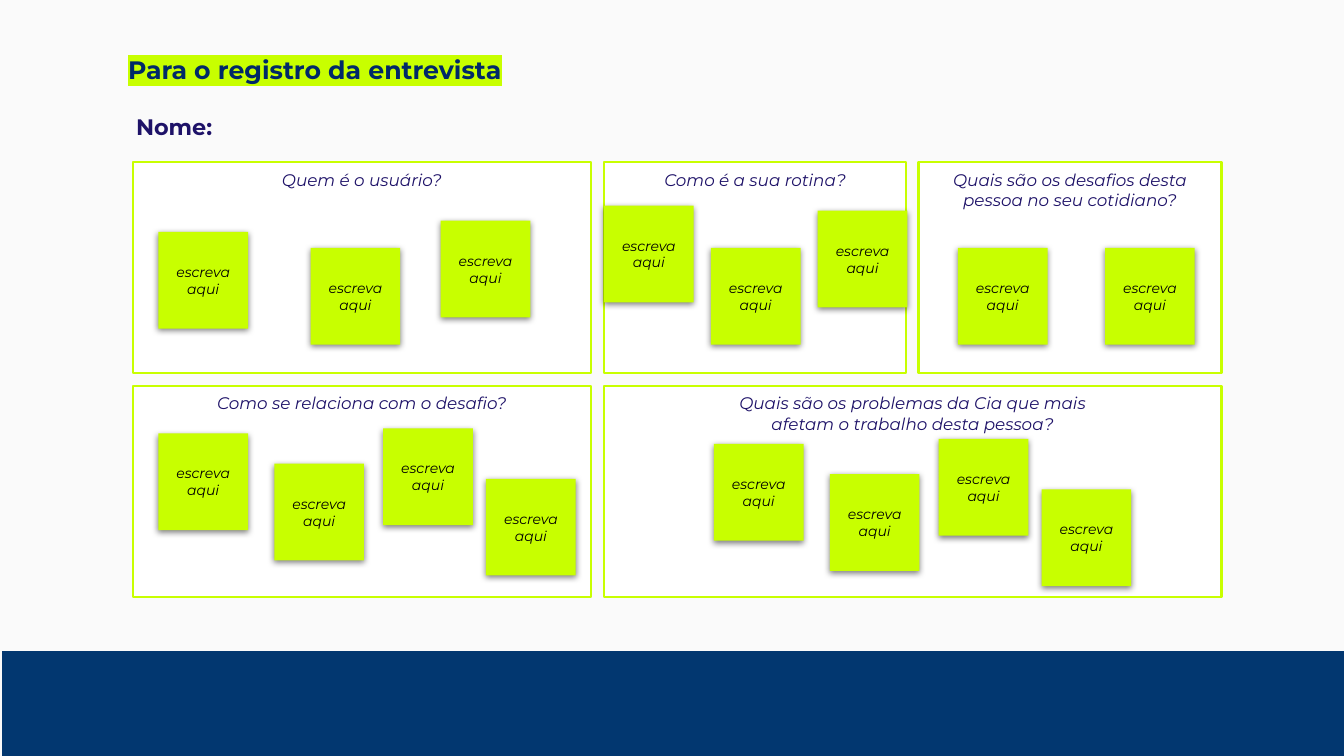
from dataclasses import dataclass

from lxml import etree
from pptx import Presentation
from pptx import util as u
from pptx.dml.color import RGBColor
from pptx.enum import shapes, text
from pptx.oxml import parse_xml
from pptx.oxml.ns import nsdecls, qn

PAPER = RGBColor(0xFA, 0xFA, 0xFA)
WHITE = RGBColor(0xFF, 0xFF, 0xFF)
BLACK = RGBColor(0x00, 0x00, 0x00)
LIME = RGBColor(0xC8, 0xFF, 0x00)
INDIGO = RGBColor(0x1E, 0x12, 0x68)
NAVY = RGBColor(0x00, 0x29, 0x68)
BAND_BLUE = RGBColor(0x02, 0x37, 0x70)

FONT = "Montserrat"
CELL = u.Inches(0.1)
COLUMNS, ROWS = 133.3, 75
PANEL_LEFTS = (13.2, 59.9, 91.1)
PANEL_RIGHTS = (58.6, 89.9, 121.15)
PANEL_TOP, PANEL_HEIGHT, PANEL_PITCH = 16.1, 20.9, 22.2
NOTE_WIDTH, NOTE_HEIGHT = 8.9, 9.6
STAIRCASE = ((0, 0), (11.5, 3), (22.3, -0.5), (32.5, 4.5))


@dataclass(frozen=True)
class Panel:
    question: str
    row: int
    first: int
    last: int
    notes: tuple


def staircase(left: float, top: float) -> tuple:
    return tuple((left + across, top + down) for across, down in STAIRCASE)


PANELS = (
    Panel("Quem é o usuário?", 0, 0, 0, ((2.5, 6.9), (17.6, 8.5), (30.5, 5.8))),
    Panel("Como é a sua rotina?", 0, 1, 1, ((0, 4.3), (10.6, 8.5), (21.2, 4.8))),
    Panel("Quais são os desafios desta pessoa no seu cotidiano?", 0, 2, 2,
          ((3.9, 8.5), (18.5, 8.5))),
    Panel("Como se relaciona com o desafio?", 1, 0, 0, staircase(2.5, 4.7)),
    Panel("Quais são os problemas da Cia que mais\vafetam o trabalho desta pessoa?", 1, 1, 2,
          staircase(10.9, 5.75)),
)


def grid(*cells: float) -> list:
    return [u.Emu(round(count * CELL)) for count in cells]


def write(box, words: str, size: float, color: RGBColor, inset: float = 0.13,
          anchor=text.MSO_ANCHOR.MIDDLE, align=text.PP_ALIGN.CENTER,
          bold: bool = False, italic: bool = False):
    frame = box.text_frame
    frame.word_wrap = True
    frame.vertical_anchor = anchor
    frame.margin_left = frame.margin_right = u.Inches(0.13)
    frame.margin_top = frame.margin_bottom = u.Inches(inset)
    para = frame.paragraphs[0]
    para.text = words
    para.alignment = align
    font = para.font
    font.name, font.size = FONT, u.Pt(size)
    font.bold, font.italic = bold, italic
    font.color.rgb = color
    return para


def add_rectangle(page, cells: tuple, fill: RGBColor):
    box = page.shapes.add_shape(shapes.MSO_SHAPE.RECTANGLE, *grid(*cells))
    box.shadow.inherit = False
    box.fill.solid()
    box.fill.fore_color.rgb = fill
    box.line.fill.background()
    return box


def add_panel(page, panel: Panel) -> tuple:
    left = PANEL_LEFTS[panel.first]
    top = PANEL_TOP + panel.row * PANEL_PITCH
    width = PANEL_RIGHTS[panel.last] - left
    box = add_rectangle(page, (left, top, width, PANEL_HEIGHT), WHITE)
    box.line.color.rgb = LIME
    box.line.width = u.Pt(1.5)
    write(box, panel.question, 12, INDIGO, inset=0.07,
          anchor=text.MSO_ANCHOR.TOP, italic=True)
    return left, top


def add_note(page, left: float, top: float) -> None:
    box = add_rectangle(page, (left, top, NOTE_WIDTH, NOTE_HEIGHT), LIME)
    write(box, "escreva aqui", 10, BLACK, italic=True)
    effects = box._element.spPr.find(qn("a:effectLst"))
    effects.append(parse_xml(
        f'<a:outerShdw {nsdecls("a")} blurRad="{u.Pt(4.5)}" dist="{u.Pt(1.5)}" '
        f'dir="5400000" algn="bl" rotWithShape="0"><a:srgbClr val="{BLACK}">'
        '<a:alpha val="50000"/></a:srgbClr></a:outerShdw>'))


def add_title(page) -> None:
    title = page.shapes.title
    title.left, title.top, title.width, title.height = grid(11.4, 4.2, 107.7, 4.9)
    para = write(title, "Para o registro da entrevista", 18, NAVY,
                 align=text.PP_ALIGN.LEFT, bold=True)
    title.text_frame.auto_size = text.MSO_AUTO_SIZE.NONE
    para.line_spacing = 1.15
    para.space_after = u.Pt(13)
    properties = para.runs[0].font._element
    highlight = etree.SubElement(properties, qn("a:highlight"))
    etree.SubElement(highlight, qn("a:srgbClr"), val=str(LIME))


def add_name_field(page) -> None:
    box = page.shapes.add_textbox(*grid(12.2, 9.9, 43.7, 5.4))
    write(box, "Nome:", 16, INDIGO, anchor=text.MSO_ANCHOR.TOP,
          align=text.PP_ALIGN.LEFT, bold=True)
    box.text_frame.auto_size = text.MSO_AUTO_SIZE.SHAPE_TO_FIT_TEXT


def main() -> None:
    deck = Presentation()
    deck.slide_width, deck.slide_height = grid(COLUMNS, ROWS)
    page = deck.slides.add_slide(deck.slide_layouts.get_by_name("Title Only"))
    page.background.fill.solid()
    page.background.fill.fore_color.rgb = PAPER

    add_title(page)
    add_name_field(page)
    add_rectangle(page, (0.2, 64.6, COLUMNS - 0.2, ROWS - 64.6), BAND_BLUE)
    corners = [add_panel(page, panel) for panel in PANELS]
    for panel, (left, top) in zip(PANELS, corners):
        for across, down in panel.notes:
            add_note(page, left + across, top + down)

    deck.save("out.pptx")


if __name__ == "__main__":
    main()
